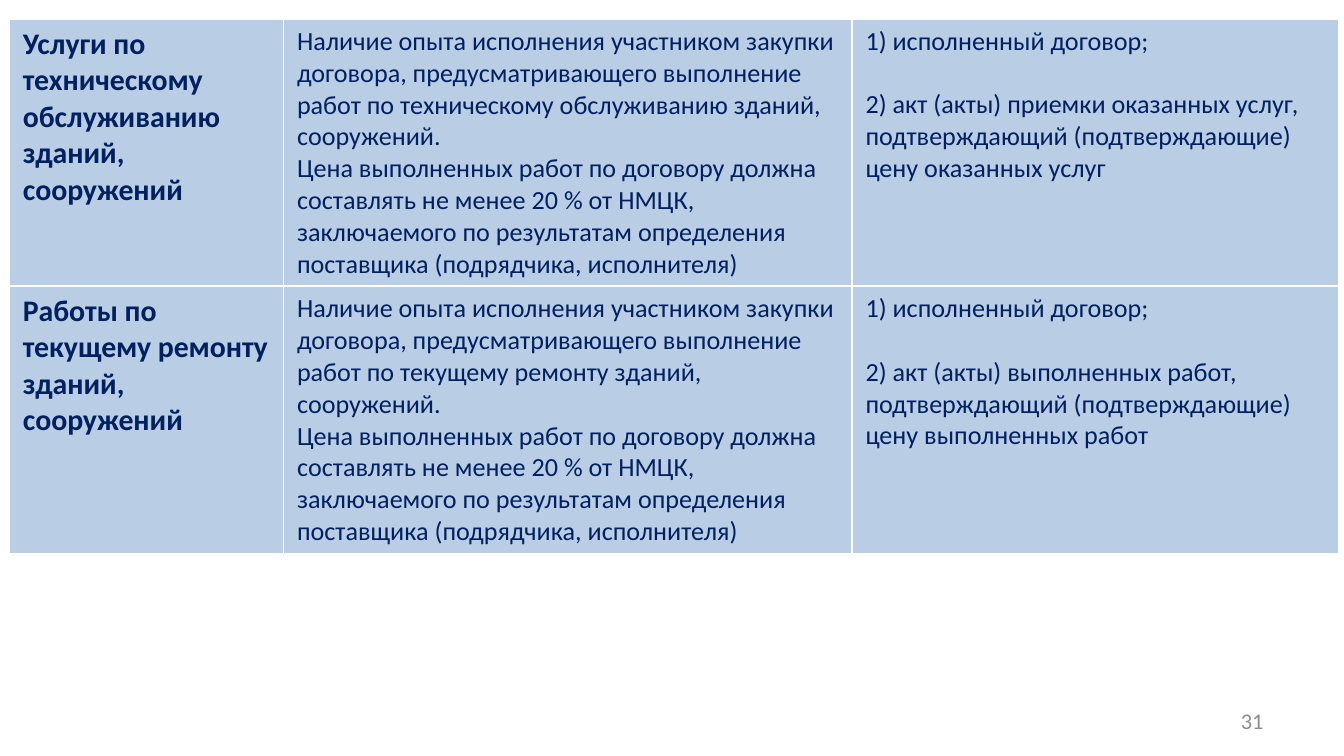
"""Build a slide with a table of experience requirements and supporting documents."""
import dataclasses

import lxml.etree
import pptx
import pptx.dml.color
import pptx.enum.text
import pptx.oxml.ns
import pptx.util

Inches = pptx.util.Inches
Pt = pptx.util.Pt


@dataclasses.dataclass(frozen=True)
class Theme:
    font: str = "Calibri"
    ink: str = "002060"
    cell: str = "B9CDE5"
    border: str = "FFFFFF"
    muted: str = "8C8C8C"
    heading_size: int = 16
    body_size: int = 14
    number_size: int = 12
    border_width: int = 1
    paragraph_gap: int = 17


class SlideBuilder:
    def __init__(self, slide, theme):
        self.slide = slide
        self.theme = theme

    def style(self, p, size, color, bold=False):
        for r in p.runs:
            r.font.name = self.theme.font
            r.font.size = Pt(size)
            r.font.bold = bold
            r.font.color.rgb = pptx.dml.color.RGBColor.from_string(color)

    def borders(self, cell):
        tc_pr = cell._tc.get_or_add_tcPr()
        qn = pptx.oxml.ns.qn
        for side in ("lnL", "lnR", "lnT", "lnB"):
            ln = lxml.etree.SubElement(
                tc_pr, qn(f"a:{side}"), w=str(Pt(self.theme.border_width))
            )
            fill = lxml.etree.SubElement(ln, qn("a:solidFill"))
            lxml.etree.SubElement(fill, qn("a:srgbClr"), val=self.theme.border)

    def cell(self, cell, paragraphs, size, bold=False, gap=0):
        self.borders(cell)
        cell.fill.solid()
        cell.fill.fore_color.rgb = pptx.dml.color.RGBColor.from_string(self.theme.cell)
        tf = cell.text_frame
        tf.text = "\n".join(paragraphs)
        for i, p in enumerate(tf.paragraphs):
            p.space_before = Pt(gap if i else 0)
            self.style(p, size, self.theme.ink, bold)

    def table(self, left, top, widths, row_height, rows):
        t = self.theme
        table = self.slide.shapes.add_table(
            len(rows), len(widths), Inches(left), Inches(top),
            Inches(sum(widths)), Inches(row_height * len(rows)),
        ).table
        table.first_row = False
        table.horz_banding = False
        for column, width in zip(table.columns, widths):
            column.width = Inches(width)
        for row, (subject, experience, documents) in zip(table.rows, rows):
            row.height = Inches(row_height)
            subject_cell, experience_cell, documents_cell = row.cells
            self.cell(subject_cell, [subject], t.heading_size, bold=True)
            self.cell(experience_cell, experience, t.body_size)
            self.cell(documents_cell, documents, t.body_size, gap=t.paragraph_gap)

    def page_number(self, left, top, width, height, number):
        tf = self.slide.shapes.add_textbox(
            Inches(left), Inches(top), Inches(width), Inches(height)
        ).text_frame
        tf.word_wrap = True
        tf.vertical_anchor = pptx.enum.text.MSO_ANCHOR.MIDDLE
        tf.text = str(number)
        p = tf.paragraphs[0]
        p.alignment = pptx.enum.text.PP_ALIGN.RIGHT
        self.style(p, self.theme.number_size, self.theme.muted)


def requirement(kind, activity, act, price):
    """Return the subject, experience and documents of one table row."""
    experience = [
        "Наличие опыта исполнения участником закупки договора, предусматривающего "
        f"выполнение работ по {activity} зданий, сооружений.",
        "Цена выполненных работ по договору должна составлять не менее 20 % от НМЦК, "
        "заключаемого по результатам определения поставщика (подрядчика, исполнителя)",
    ]
    documents = [
        "1) исполненный договор;",
        f"2) акт (акты) {act}, подтверждающий (подтверждающие) цену {price}",
    ]
    return f"{kind} по {activity} зданий, сооружений", experience, documents


def main():
    prs = pptx.Presentation()
    prs.slide_width = Inches(10)
    prs.slide_height = prs.slide_width * 9 // 16
    s = SlideBuilder(prs.slides.add_slide(prs.slide_layouts[6]), Theme())
    s.page_number(7.17, 5.21, 2.33, 0.3, 31)
    rows = [
        requirement("Услуги", "техническому обслуживанию",
                    "приемки оказанных услуг", "оказанных услуг"),
        requirement("Работы", "текущему ремонту",
                    "выполненных работ", "выполненных работ"),
    ]
    s.table(0.07, 0.14, (2.04, 4.23, 3.62), 1.99, rows)
    prs.save("out.pptx")


if __name__ == "__main__":
    main()
